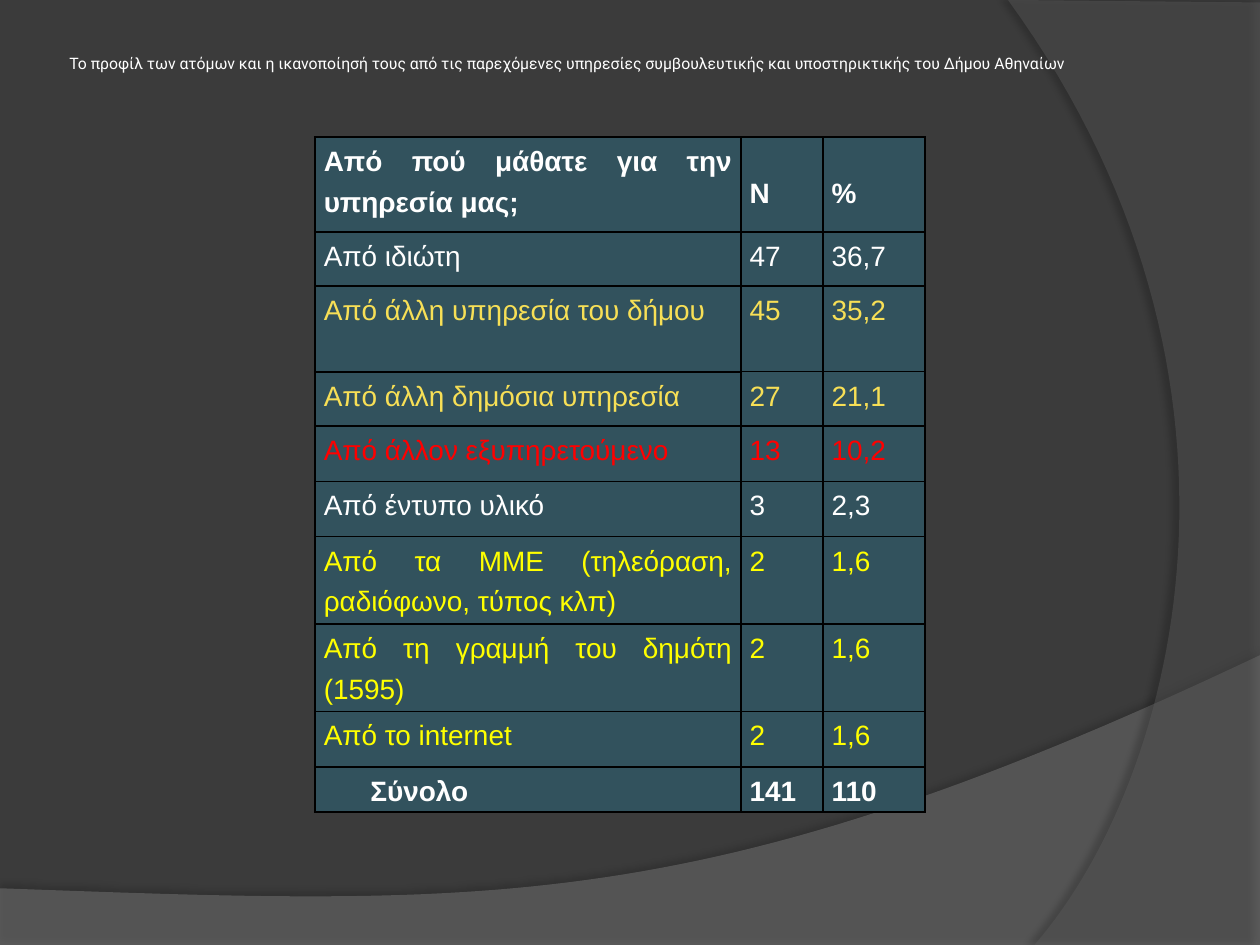
from lxml.etree import SubElement as add_node
from pptx import Presentation
from pptx.dml.color import RGBColor
from pptx.enum.text import MSO_ANCHOR as Anchor, PP_ALIGN as Align
from pptx.oxml.ns import qn
from pptx.util import Inches, Pt

TITLE = ("Το προφίλ των ατόμων και η ικανοποίησή τους από τις παρεχόμενες υπηρεσίες "
         "συμβουλευτικής και υποστηρικτικής του Δήμου Αθηναίων")
ROWS = [
    ("Από πού μάθατε για την υπηρεσία μας;", "Ν", "%", "white", 0.75),
    ("Από ιδιώτη", "47", "36,7", "white", 0.43),
    ("Από άλλη υπηρεσία του δήμου", "45", "35,2", "gold", 0.68),
    ("Από άλλη δημόσια υπηρεσία", "27", "21,1", "gold", 0.43),
    ("Από άλλον εξυπηρετούμενο", "13", "10,2", "red", 0.44),
    ("Από έντυπο υλικό", "3", "2,3", "white", 0.44),
    ("Από τα ΜΜΕ (τηλεόραση, ραδιόφωνο, τύπος κλπ)", "2", "1,6", "yellow", 0.68),
    ("Από τη γραμμή του δημότη (1595)", "2", "1,6", "yellow", 0.68),
    ("Από το internet", "2", "1,6", "yellow", 0.44),
    ("Σύνολο", "141", "110", "white", 0.36),
]
COLUMN_WIDTHS = [3.38, 0.65, 0.81]
TABLE_LEFT, TABLE_TOP = 2.5, 1.09
THEME = {
    "background": "3B3B3B", "cell": "32525D", "border": "000000", "shadow": "000000",
    "wave": "7F7F7F", "arc": "5E5E5E",
    "white": "FFFFFF", "gold": "F7DF56", "red": "FF0000", "yellow": "FFFF00",
    "title_font": "Roboto", "title_size": 9, "table_font": "Arial", "table_size": 16,
}


def color(name):
    return RGBColor.from_string(THEME[name])


def style(para, font, size, tint, bold=False):
    para.font.name = THEME[font]
    para.font.size = Pt(THEME[size])
    para.font.color.rgb = color(tint)
    para.font.bold = bold


def curve(start, control_a, control_b, end, steps=60):
    points = []
    for step in range(steps + 1):
        t = step / steps
        u = 1 - t
        weights = (u ** 3, 3 * u * u * t, 3 * u * t * t, t ** 3)
        points.append(tuple(sum(w * p[axis] for w, p in zip(weights, (start, control_a, control_b, end)))
                            for axis in (0, 1)))
    return points


def add_swoosh(page, points, tint, opacity, shadow):
    builder = page.shapes.build_freeform(*map(Inches, points[0]), scale=1.0)
    builder.add_line_segments([tuple(map(Inches, point)) for point in points[1:]], close=True)
    shape = builder.convert_to_shape()
    shape.fill.solid()
    shape.fill.fore_color.rgb = color(tint)
    shape.line.fill.background()
    shape.shadow.inherit = False
    properties = shape._element.spPr
    fill_color = properties.find(qn("a:solidFill")).find(qn("a:srgbClr"))
    add_node(fill_color, qn("a:alpha"), val=str(opacity * 1000))
    shade, blur, distance, angle = shadow
    outer = add_node(properties.find(qn("a:effectLst")), qn("a:outerShdw"), blurRad=str(Pt(blur)),
                     dist=str(Pt(distance)), dir=str(angle * 60000), rotWithShape="0")
    shadow_color = add_node(outer, qn("a:srgbClr"), val=THEME["shadow"])
    add_node(shadow_color, qn("a:alpha"), val=str(shade * 1000))


def set_borders(cell, weights):
    properties = cell._tc.get_or_add_tcPr()
    for side, weight in zip("LRTB", weights):
        line = add_node(properties, qn(f"a:ln{side}"), w=str(Pt(weight)))
        fill = add_node(line, qn("a:solidFill"))
        add_node(fill, qn("a:srgbClr"), val=THEME["border"])


def add_title(page):
    box = page.shapes.add_textbox(Inches(0.5), Inches(0.3), Inches(8.17), Inches(0.56))
    frame = box.text_frame
    frame.word_wrap = True
    frame.vertical_anchor = Anchor.MIDDLE
    frame.margin_left = frame.margin_right = frame.margin_top = Inches(0.05)
    frame.margin_bottom = Inches(0.2)
    para = frame.paragraphs[0]
    para.text = TITLE
    style(para, "title_font", "title_size", "white")


def add_sources_table(page):
    heights = [row[-1] for row in ROWS]
    table = page.shapes.add_table(
        len(ROWS), len(COLUMN_WIDTHS), Inches(TABLE_LEFT), Inches(TABLE_TOP),
        Inches(sum(COLUMN_WIDTHS)), Inches(sum(heights))).table
    for column, width in zip(table.columns, COLUMN_WIDTHS):
        column.width = Inches(width)
    last = len(ROWS) - 1
    for r, (*texts, tint, height) in enumerate(ROWS):
        table.rows[r].height = Inches(height)
        for c, text in enumerate(texts):
            cell = table.cell(r, c)
            heavy_side = c == 0 and r < 4
            top = 1.5 if r == 0 or (c == 0 and r <= 4) else 1
            bottom = 1.5 if r == last or heavy_side else 1
            set_borders(cell, (1.5, 1.5, top, bottom))
            cell.fill.solid()
            cell.fill.fore_color.rgb = color("cell")
            cell.margin_left = Inches(0.44 if r == last and c == 0 else 0.07)
            cell.margin_right = Inches(0.07)
            cell.margin_top = Inches(0.25 if r == 0 and c > 0 else 0)
            cell.margin_bottom = 0
            para = cell.text_frame.paragraphs[0]
            para.text = text
            para.alignment = Align.JUSTIFY
            para.line_spacing = 1.3
            style(para, "table_font", "table_size", tint, r in (0, last))


def main():
    deck = Presentation()
    deck.slide_width, deck.slide_height = Inches(10), Inches(7.5)
    page = deck.slides.add_slide(deck.slide_layouts[6])
    page.background.fill.solid()
    page.background.fill.fore_color.rgb = color("background")
    wave = [(0, 7.51), (10, 7.51)] + curve((10, 5.2), (5.59, 7.29), (3.91, 7.19), (0, 7.05))
    arc = [(10, 0.02), (10, 7.5)] + curve((8.21, 7.5), (9.35, 6.19), (10.18, 3), (8, 0))
    add_swoosh(page, wave, "wave", 45, (35, 4, 3.5, 270))
    add_swoosh(page, arc, "arc", 40, (45, 4, 4, 180))
    add_title(page)
    add_sources_table(page)
    deck.save("out.pptx")


if __name__ == "__main__":
    main()
